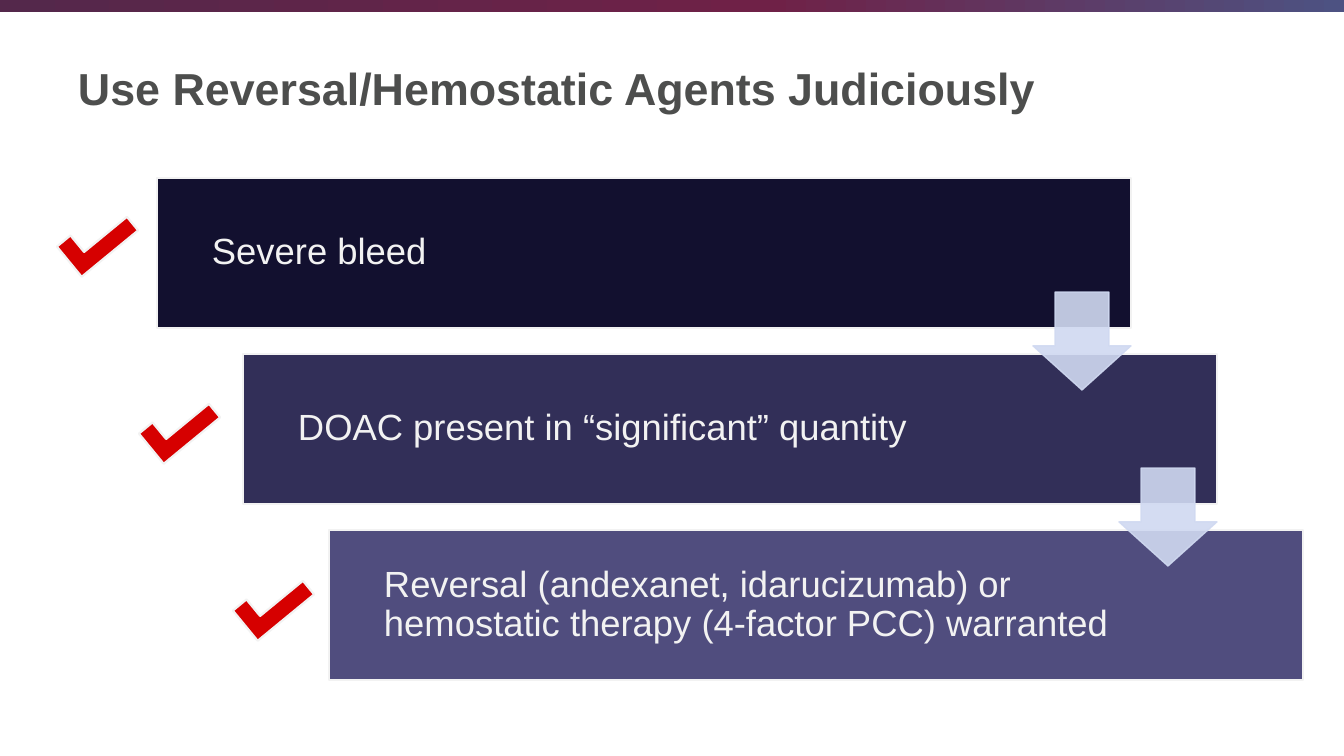
from lxml.etree import SubElement
from pptx import Presentation
from pptx.dml.color import RGBColor
from pptx.enum.shapes import MSO_SHAPE as SHAPE
from pptx.enum.text import MSO_ANCHOR as ANCHOR, PP_ALIGN as ALIGN
from pptx.oxml.ns import qn
from pptx.util import Emu, Pt

PX = 914400 / 100.8
SLIDE_W, SLIDE_H = 1344, 756
PALE, ARROW, RED = "F2F2F2", "D0D9F1", "D60000"
CARD_W, CARD_H = 974, 150
STEP_X, STEP_Y = 86, 176

# text, fill, opacity, right inset, check mark offset from the card
STEPS = [
    ("Severe bleed", "12102F", 100, 169, (-96, 41)),
    ("DOAC present in “significant” quantity", "1C1946", 90, 200, (-100, 52)),
    ("Reversal (andexanet, idarucizumab) or hemostatic therapy (4-factor PCC) warranted",
     "25215E", 80, 151, (-92, 53)),
]


def px(n):
    return Emu(round(n * PX))


def rgb(value):
    return RGBColor.from_string(value)


def set_alpha(fill_parent, opacity):
    color = fill_parent.find(qn("a:solidFill"))[0]
    SubElement(color, qn("a:alpha")).set("val", str(opacity * 1000))


def add_block(s, kind, box, fill, line=None, line_w=1, opacity=100, line_opacity=100):
    sp = s.shapes.add_shape(kind, *map(px, box))
    sp.shadow.inherit = False
    sp.fill.solid()
    sp.fill.fore_color.rgb = rgb(fill)
    sp_pr = sp._element.spPr
    if opacity < 100:
        set_alpha(sp_pr, opacity)
    if line is None:
        sp.line.fill.background()
    else:
        sp.line.color.rgb = rgb(line)
        sp.line.width = Pt(line_w)
        if line_opacity < 100:
            set_alpha(sp_pr.find(qn("a:ln")), line_opacity)
    return sp


def write(sp, text, size, color, bold=False, insets=(10, 5, 10, 5), spacing=1.0):
    tf = sp.text_frame
    tf.word_wrap = True
    tf.vertical_anchor = ANCHOR.MIDDLE
    tf.margin_left, tf.margin_top, tf.margin_right, tf.margin_bottom = map(px, insets)
    p = tf.paragraphs[0]
    p.alignment = ALIGN.LEFT
    p.line_spacing = spacing
    r = p.add_run()
    r.text = text
    r.font.name, r.font.size, r.font.bold = "Arial", Pt(size), bold
    r.font.color.rgb = rgb(color)


def add_top_band(s, box):
    sp = add_block(s, SHAPE.RECTANGLE, box, "54284B")
    sp.fill.gradient()
    sp.fill.gradient_angle = 0
    stops = sp._element.spPr.find(qn("a:gradFill")).find(qn("a:gsLst"))
    for stop in list(stops):
        stops.remove(stop)
    for position, color in ((0, "54284B"), (57, "6F2147"), (100, "4D5282")):
        stop = SubElement(stops, qn("a:gs"), pos=str(position * 1000))
        SubElement(stop, qn("a:srgbClr"), val=color)


def add_title(s, box):
    sp = s.shapes.add_textbox(*map(px, box))
    write(sp, "Use Reversal/Hemostatic Agents Judiciously", 32, "4D4E4D", bold=True)


def add_staircase(s, left, top):
    corners = [(left + i * STEP_X, top + i * STEP_Y) for i in range(len(STEPS))]

    # Cards
    for (x, y), (text, fill, opacity, right, _) in zip(corners, STEPS):
        sp = add_block(s, SHAPE.RECTANGLE, (x, y, CARD_W, CARD_H), fill, PALE, opacity=opacity)
        write(sp, text, 26, PALE, insets=(55, 16, right, 16), spacing=0.9)

    # Arrows from each card to the next
    for x, y in corners[:-1]:
        sp = add_block(s, SHAPE.DOWN_ARROW, (x + 876, y + 114, 98, 98), ARROW, ARROW,
                       opacity=90, line_opacity=90)
        sp.adjustments[0], sp.adjustments[1] = 0.55, 0.45

    # Check marks
    for (x, y), (*_, (dx, dy)) in zip(corners, STEPS):
        sp = add_block(s, SHAPE.CORNER, (x + dx, y + dy, 73, 39), RED, PALE, line_w=1.5)
        sp.adjustments[0] = sp.adjustments[1] = 0.45
        sp.rotation = 320.6


def main():
    prs = Presentation()
    prs.slide_width, prs.slide_height = px(SLIDE_W), px(SLIDE_H)
    s = prs.slides.add_slide(prs.slide_layouts[6])
    add_top_band(s, (0, 0, SLIDE_W, 12))
    add_title(s, (68, 22, 1184, 131))
    add_staircase(s, 157, 178)
    prs.save("out.pptx")


if __name__ == "__main__":
    main()
